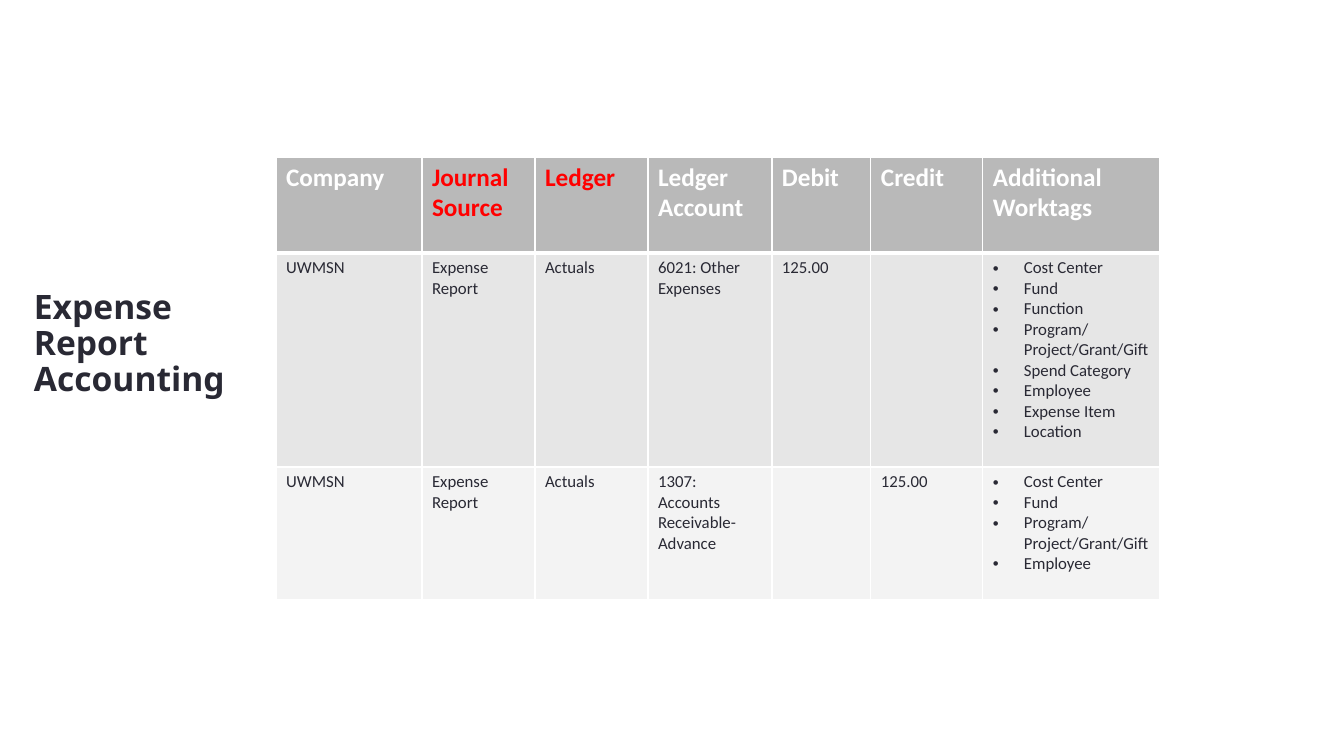
from lxml.etree import SubElement
from pptx import Presentation
from pptx.dml.color import RGBColor
from pptx.enum.text import MSO_ANCHOR
from pptx.oxml import parse_xml
from pptx.oxml.ns import nsdecls, qn
from pptx.util import Pt

TITLE = "Expense Report Accounting"
HEADERS = ["Company", "Journal Source", "Ledger", "Ledger Account", "Debit", "Credit",
           "Additional Worktags"]
RED_HEADERS = {"Journal Source", "Ledger"}
ENTRIES = [
    ["UWMSN", "Expense Report", "Actuals", "6021: Other Expenses", "125.00", "",
     ["Cost Center", "Fund", "Function", "Program/Project/Grant/Gift", "Spend Category",
      "Employee", "Expense Item", "Location"]],
    ["UWMSN", "Expense Report", "Actuals", "1307: Accounts Receivable-Advance", "", "125.00",
     ["Cost Center", "Fund", "Program/Project/Grant/Gift", "Employee"]],
]

WHITE = RGBColor(0xFF, 0xFF, 0xFF)
RED = RGBColor(0xFF, 0x00, 0x00)
INK = RGBColor(0x29, 0x29, 0x34)
ROW_FILLS = [RGBColor(0xB9, 0xB9, 0xB9), RGBColor(0xE6, 0xE6, 0xE6), RGBColor(0xF3, 0xF3, 0xF3)]

SLIDE_SIZE = (1344, 756)
TITLE_BOX = (24, 117, 230, 455)
TABLE_ORIGIN = (276, 157)
COLUMN_WIDTHS = [146, 113, 113, 124, 99, 112, 177]
ROW_HEIGHTS = [96, 214, 133]
BULLET_INDENT = 31


def px(length):
    return round(length * 914400 / 100.8)


def set_font(paragraph, name, size, color, bold):
    font = paragraph.font
    font.name, font.size, font.bold = name, Pt(size), bold
    font.color.rgb = color


def add_bullet(paragraph):
    properties = paragraph._p.get_or_add_pPr()
    properties.set("marL", str(px(BULLET_INDENT)))
    properties.set("indent", str(-px(BULLET_INDENT)))
    SubElement(properties, qn("a:buFont")).set("typeface", "Arial")
    SubElement(properties, qn("a:buChar")).set("char", "•")


def set_borders(cell, row_index):
    widths = {"L": 1, "R": 1, "T": 3 if row_index == 1 else 1, "B": 3 if row_index == 0 else 1}
    properties = cell._tc.get_or_add_tcPr()
    for position, (side, width) in enumerate(widths.items()):
        properties.insert(position, parse_xml(
            f'<a:ln{side} {nsdecls("a")} w="{Pt(width)}"><a:solidFill>'
            f'<a:srgbClr val="{WHITE}"/></a:solidFill></a:ln{side}>'))


def fill_cell(cell, content, row_index):
    cell.fill.solid()
    cell.fill.fore_color.rgb = ROW_FILLS[row_index]
    set_borders(cell, row_index)
    bulleted = isinstance(content, list)
    cell.text = "\n".join(content) if bulleted else content
    for paragraph in cell.text_frame.paragraphs:
        if bulleted:
            add_bullet(paragraph)
        if row_index == 0:
            set_font(paragraph, "Calibri", 18, RED if content in RED_HEADERS else WHITE, True)
        else:
            set_font(paragraph, "Calibri", 12, INK, False)


def add_journal_table(slide):
    rows = [HEADERS, *ENTRIES]
    size = (sum(COLUMN_WIDTHS), sum(ROW_HEIGHTS))
    table = slide.shapes.add_table(
        len(rows), len(HEADERS), *map(px, TABLE_ORIGIN + size)).table
    for column, width in zip(table.columns, COLUMN_WIDTHS):
        column.width = px(width)
    for row, height in zip(table.rows, ROW_HEIGHTS):
        row.height = px(height)
    for row_index, contents in enumerate(rows):
        for column_index, content in enumerate(contents):
            fill_cell(table.cell(row_index, column_index), content, row_index)


def add_title(slide):
    frame = slide.shapes.add_textbox(*map(px, TITLE_BOX)).text_frame
    frame.word_wrap = True
    frame.vertical_anchor = MSO_ANCHOR.MIDDLE
    paragraph = frame.paragraphs[0]
    paragraph.text = TITLE
    paragraph.line_spacing = 0.9
    set_font(paragraph, "Noto Sans", 24, INK, True)


def main():
    presentation = Presentation()
    presentation.slide_width, presentation.slide_height = map(px, SLIDE_SIZE)
    slide = presentation.slides.add_slide(presentation.slide_layouts[6])
    add_journal_table(slide)
    add_title(slide)
    presentation.save("out.pptx")


if __name__ == "__main__":
    main()
